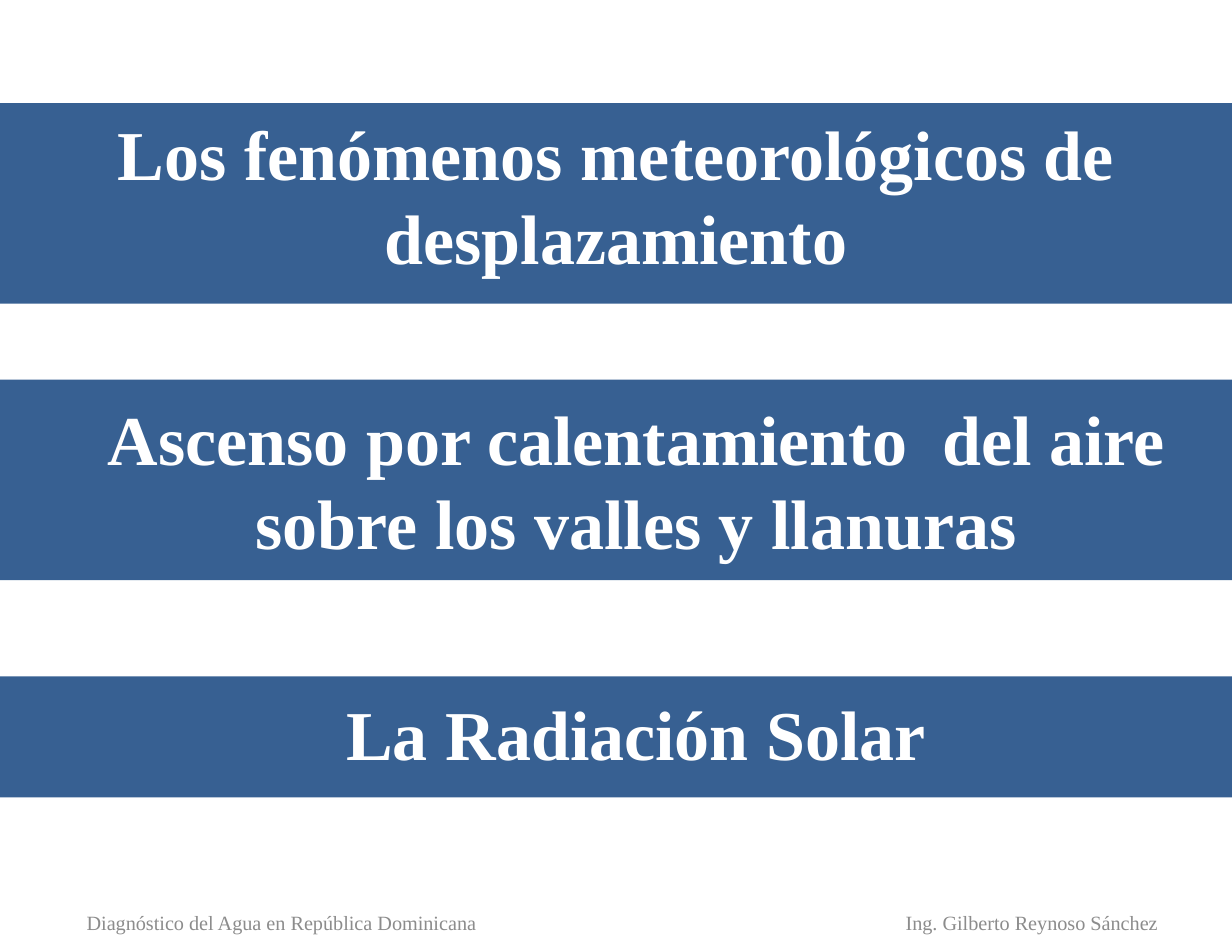
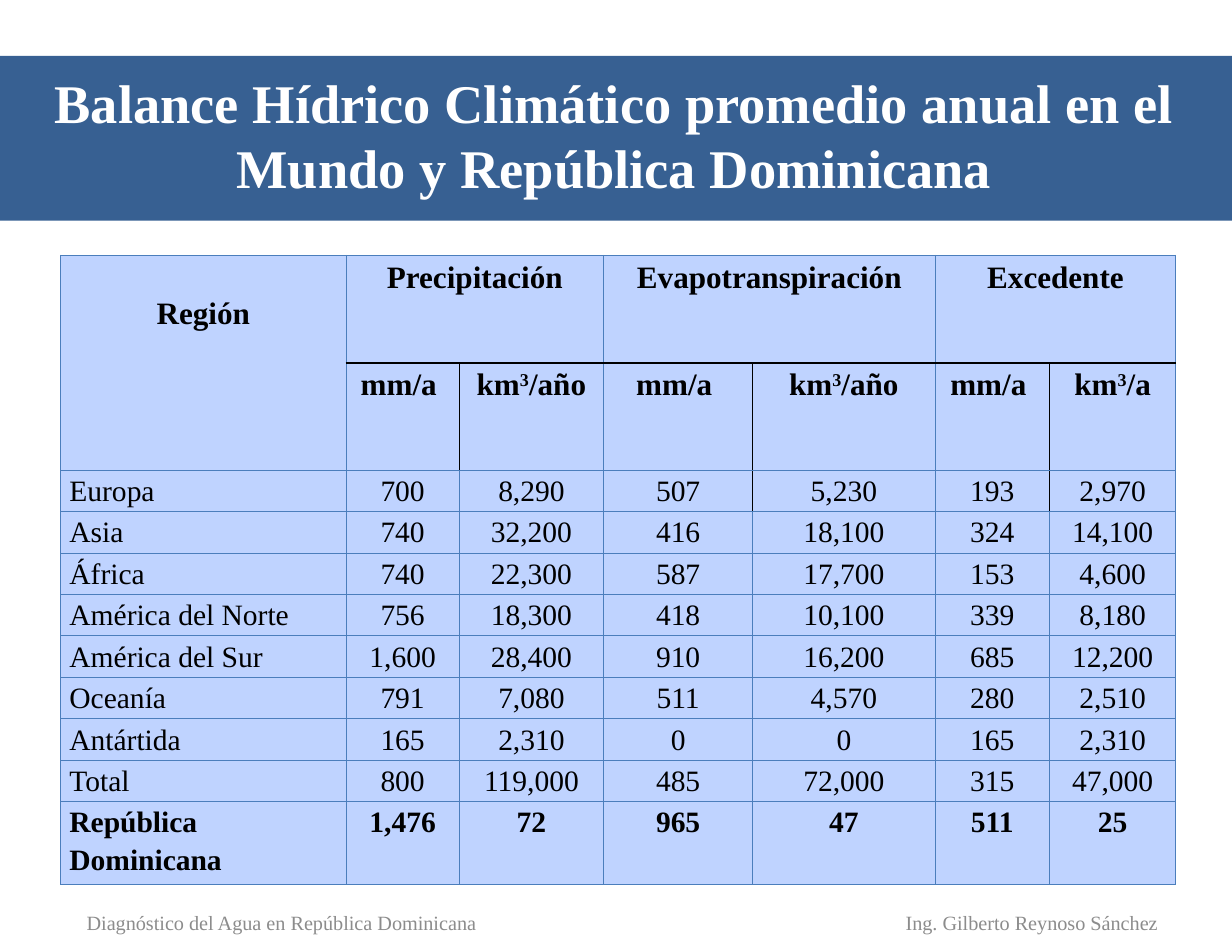
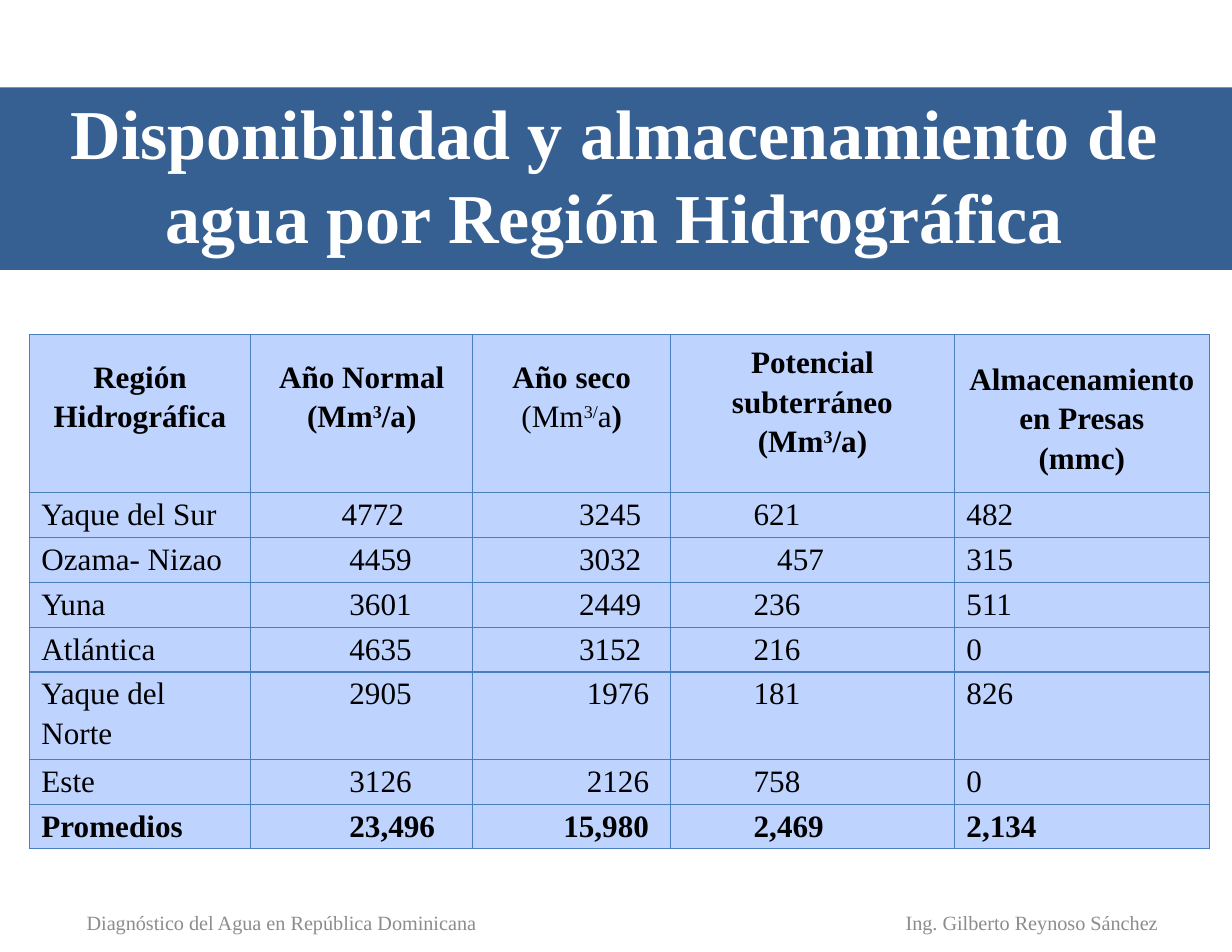
from dataclasses import dataclass
from typing import NamedTuple

from lxml import etree
from pptx import Presentation
from pptx.dml.color import RGBColor
from pptx.enum.shapes import MSO_SHAPE
from pptx.enum.text import MSO_ANCHOR, PP_ALIGN
from pptx.oxml.ns import qn
from pptx.util import Inches, Pt

RECTANGLE = MSO_SHAPE.RECTANGLE
MIDDLE = MSO_ANCHOR.MIDDLE
CENTER = PP_ALIGN.CENTER
LEFT = PP_ALIGN.LEFT

BAND_BLUE = RGBColor(0x37, 0x60, 0x92)
CELL_BLUE = RGBColor(0xBF, 0xD3, 0xFF)
GRID_BLUE = RGBColor(0x4B, 0x7E, 0xBC)
FOOTER_GRAY = RGBColor(0x8C, 0x8C, 0x8C)
WHITE = RGBColor(0xFF, 0xFF, 0xFF)
BLACK = RGBColor(0, 0, 0)

FONT = "Times New Roman"
SLIDE_WIDTH = 11
TITLE_HEIGHT = 1.42
SPACE_WIDTH = 0.07


class Box(NamedTuple):
    left: float
    top: float
    width: float
    height: float

    def emu(self) -> list:
        return [Inches(length) for length in self]


class Piece(NamedTuple):
    text: str
    bold: bool = True
    raised: bool = False


class TitleBand(NamedTuple):
    text: str
    band_top: float
    band_height: float
    title_left: float
    title_top: float
    title_width: float = 9.9
    size: float = 45


class Border(NamedTuple):
    color: RGBColor = GRID_BLUE
    width: float = 0.75


@dataclass
class TableStyle:
    box: Box
    columns: list[float]
    rows: list[float]
    side_margin: float


BLACK_BORDER = Border(BLACK, 1)

FOOTERS = {
    "Ing. Gilberto Reynoso Sánchez": Box(7.47, 8.01, 3.48, 0.45),
    "Diagnóstico del Agua en República Dominicana": Box(0.47, 8.01, 4.08, 0.45),
}

PHENOMENA = [
    TitleBand("Los fenómenos meteorológicos de desplazamiento", 0.92, 1.79, 0.55, 1.03),
    TitleBand("Ascenso por calentamiento  del aire sobre los valles y llanuras",
              3.39, 1.79, 0.73, 3.57),
    TitleBand("La Radiación Solar", 6.04, 1.08, 0.73, 5.83),
]
BALANCE_TITLE = TitleBand(
    "Balance Hídrico Climático promedio anual en el Mundo y República Dominicana",
    0.5, 1.47, 0.37, 0.49, 10.23, 35)
AVAILABILITY_TITLE = TitleBand(
    "Disponibilidad y almacenamiento de agua por Región Hidrográfica",
    0.78, 1.63, 0.37, 0.84, 10.23)

BALANCE_STYLE = TableStyle(
    Box(0.54, 2.28, 9.95, 5.61), [2.55, 1.01, 1.29, 1.33, 1.63, 1.02, 1.13],
    [0.96] * 2 + [0.37] * 8 + [0.74], 0.08)
BALANCE_GROUPS = {1: "Precipitación", 3: "Evapotranspiración", 5: "Excedente"}
BALANCE_YEAR_UNITS = {2: "/año", 4: "/año", 6: "/a"}
BALANCE_ROWS = [
    ("Europa", "700", "8,290", "507", "5,230", "193", "2,970"),
    ("Asia", "740", "32,200", "416", "18,100", "324", "14,100"),
    ("África", "740", "22,300", "587", "17,700", "153", "4,600"),
    ("América del Norte", "756", "18,300", "418", "10,100", "339", "8,180"),
    ("América del Sur", "1,600", "28,400", "910", "16,200", "685", "12,200"),
    ("Oceanía", "791", "7,080", "511", "4,570", "280", "2,510"),
    ("Antártida", "165", "2,310", "0", "0", "165", "2,310"),
    ("Total", "800", "119,000", "485", "72,000", "315", "47,000"),
    ("República Dominicana", "1,476", "72", "965", "47", "511", "25"),
]
# Grid positions (row, column) of the cells left of a black vertical line
BALANCE_BLACK_VERTICALS = {(1, 1), (1, 3), (1, 5), (2, 3), (2, 5)}

AVAILABILITY_STYLE = TableStyle(
    Box(0.26, 2.99, 10.54, 4.58), [1.98, 1.98, 1.77, 2.53, 2.28],
    [1.41] + [0.4] * 4 + [0.78] + [0.4] * 2, 0.11)
CUBIC_UNIT = [Piece("(Mm"), Piece("3", raised=True), Piece("/a)")]
DRY_YEAR_UNIT = [Piece("(Mm", False), Piece("3/", False, True), Piece("a", False), Piece(")")]
# Each heading: distance from the top of the cell and its paragraphs
AVAILABILITY_HEADINGS = [
    (0.18, [[Piece("Región Hidrográfica")]]),
    (0.18, [[Piece("Año Normal")], CUBIC_UNIT]),
    (0.18, [[Piece("Año seco")], DRY_YEAR_UNIT]),
    (0.05, [[Piece("Potencial subterráneo")], CUBIC_UNIT]),
    (0.2, [[Piece("Almacenamiento\ven Presas")], [Piece("(mmc)")]]),
]
AVAILABILITY_ROWS = [
    ("Yaque del Sur", "4772", "3245", "621", "482"),
    ("Ozama- Nizao", "4459", "3032", "457", "315"),
    ("Yuna", "3601", "2449", "236", "511"),
    ("Atlántica", "4635", "3152", "216", "0"),
    ("Yaque del Norte", "2905", "1976", "181", "826"),
    ("Este", "3126", "2126", "758", "0"),
    ("Promedios", "23,496", "15,980", "2,469", "2,134"),
]
# Indents in widths of a space: by column, then the cells that differ
COLUMN_INDENTS = [0, 11, 12, 9, 0]
CELL_INDENTS = {(1, 1): 10, (2, 3): 12, (5, 2): 13, (6, 2): 13, (7, 2): 10}


def add_run(paragraph, piece: Piece, size: float, color: RGBColor) -> None:
    """Add one run; a vertical tab in its text becomes a line break."""
    for index, line in enumerate(piece.text.split("\v")):
        if index:
            paragraph.add_line_break()
        run = paragraph.add_run()
        run.text = line
        run.font.name = FONT
        run.font.size = Pt(size)
        run.font.bold = piece.bold
        run.font.color.rgb = color
        if piece.raised:
            run.font._element.set("baseline", "30000")


def add_centered_text(slide, box: Box, piece: Piece, size: float, color: RGBColor) -> None:
    frame = slide.shapes.add_textbox(*box.emu()).text_frame
    frame.word_wrap = True
    frame.vertical_anchor = MIDDLE
    frame.margin_left = frame.margin_right = Inches(0.11)
    frame.margin_top = frame.margin_bottom = Inches(0.06)
    paragraph = frame.paragraphs[0]
    paragraph.alignment = CENTER
    add_run(paragraph, piece, size, color)


def add_title_band(slide, title: TitleBand) -> None:
    band_box = Box(0, title.band_top, SLIDE_WIDTH, title.band_height)
    band = slide.shapes.add_shape(RECTANGLE, *band_box.emu())
    band.shadow.inherit = False
    band.fill.solid()
    band.fill.fore_color.rgb = BAND_BLUE
    band.line.fill.background()
    title_box = Box(title.title_left, title.title_top, title.title_width, TITLE_HEIGHT)
    add_centered_text(slide, title_box, Piece(title.text), title.size, WHITE)


def add_slide(deck, titles: list[TitleBand]):
    slide = deck.slides.add_slide(deck.slide_layouts[6])
    for title in titles:
        add_title_band(slide, title)
    for text, box in FOOTERS.items():
        add_centered_text(slide, box, Piece(text, False), 13, FOOTER_GRAY)
    return slide


def set_borders(cell, **special: Border) -> None:
    """Draw the four borders; special ones are given by side: L, R, T, B."""
    properties = cell._tc.get_or_add_tcPr()
    for side in "LRTB":
        border = special.get(side, Border())
        line = etree.SubElement(properties, qn(f"a:ln{side}"), w=str(Pt(border.width)))
        fill = etree.SubElement(line, qn("a:solidFill"))
        etree.SubElement(fill, qn("a:srgbClr"), val=str(border.color))


def add_grid(slide, style: TableStyle):
    frame = slide.shapes.add_table(len(style.rows), len(style.columns), *style.box.emu())
    table = frame.table
    table.first_row = table.horz_banding = False
    for column, width in zip(table.columns, style.columns):
        column.width = Inches(width)
    for row, height in zip(table.rows, style.rows):
        row.height = Inches(height)
    for cell in table.iter_cells():
        cell.margin_left = cell.margin_right = Inches(style.side_margin)
        cell.margin_top = cell.margin_bottom = 0
    return table


def paint_cells(table, black_verticals: set, black_below_first: bool) -> None:
    for row in range(len(table.rows)):
        for column in range(len(table.columns)):
            special = {}
            if (row, column) in black_verticals:
                special["R"] = BLACK_BORDER
            if (row, column - 1) in black_verticals:
                special["L"] = BLACK_BORDER
            if black_below_first and column and row < 2:
                special["T" if row else "B"] = BLACK_BORDER
            cell = table.cell(row, column)
            set_borders(cell, **special)
            cell.fill.solid()
            cell.fill.fore_color.rgb = CELL_BLUE


def write_cell(cell, paragraphs: list[list[Piece]], size: float = 20,
               alignment=CENTER, top: float = 0, indent: float = 0) -> None:
    cell.margin_top = Inches(top)
    frame = cell.text_frame
    for index, pieces in enumerate(paragraphs):
        paragraph = frame.add_paragraph() if index else frame.paragraphs[0]
        paragraph.alignment = alignment
        paragraph.line_spacing = 1.15
        if indent:
            paragraph._p.get_or_add_pPr().set("marL", str(Inches(indent)))
        for piece in pieces:
            add_run(paragraph, piece, size, BLACK)


def add_balance_table(slide) -> None:
    table = add_grid(slide, BALANCE_STYLE)
    paint_cells(table, BALANCE_BLACK_VERTICALS, True)
    table.cell(0, 0).merge(table.cell(1, 0))
    write_cell(table.cell(0, 0), [[Piece("Región")]], top=0.32)
    for column, group in BALANCE_GROUPS.items():
        table.cell(0, column).merge(table.cell(0, column + 1))
        write_cell(table.cell(0, column), [[Piece(group)]])
        write_cell(table.cell(1, column), [[Piece("mm/a ")]])
    for column, unit in BALANCE_YEAR_UNITS.items():
        pieces = [Piece("km"), Piece("3", raised=True), Piece(unit)]
        write_cell(table.cell(1, column), [pieces])
    for row, values in enumerate(BALANCE_ROWS, 2):
        bold = values is BALANCE_ROWS[-1]
        for column, value in enumerate(values):
            write_cell(table.cell(row, column), [[Piece(value, bold)]], 19,
                       CENTER if column else LEFT)


def add_availability_table(slide) -> None:
    table = add_grid(slide, AVAILABILITY_STYLE)
    paint_cells(table, set(), False)
    for column, (top, paragraphs) in enumerate(AVAILABILITY_HEADINGS):
        write_cell(table.cell(0, column), paragraphs, top=top)
    for row, values in enumerate(AVAILABILITY_ROWS, 1):
        bold = values is AVAILABILITY_ROWS[-1]
        for column, value in enumerate(values):
            spaces = CELL_INDENTS.get((row, column), COLUMN_INDENTS[column])
            write_cell(table.cell(row, column), [[Piece(value, bold)]],
                       alignment=LEFT, indent=spaces * SPACE_WIDTH)


def main() -> None:
    deck = Presentation()
    deck.slide_width = Inches(SLIDE_WIDTH)
    deck.slide_height = Inches(8.5)
    add_slide(deck, PHENOMENA)
    add_balance_table(add_slide(deck, [BALANCE_TITLE]))
    add_availability_table(add_slide(deck, [AVAILABILITY_TITLE]))
    deck.save("out.pptx")


if __name__ == "__main__":
    main()
